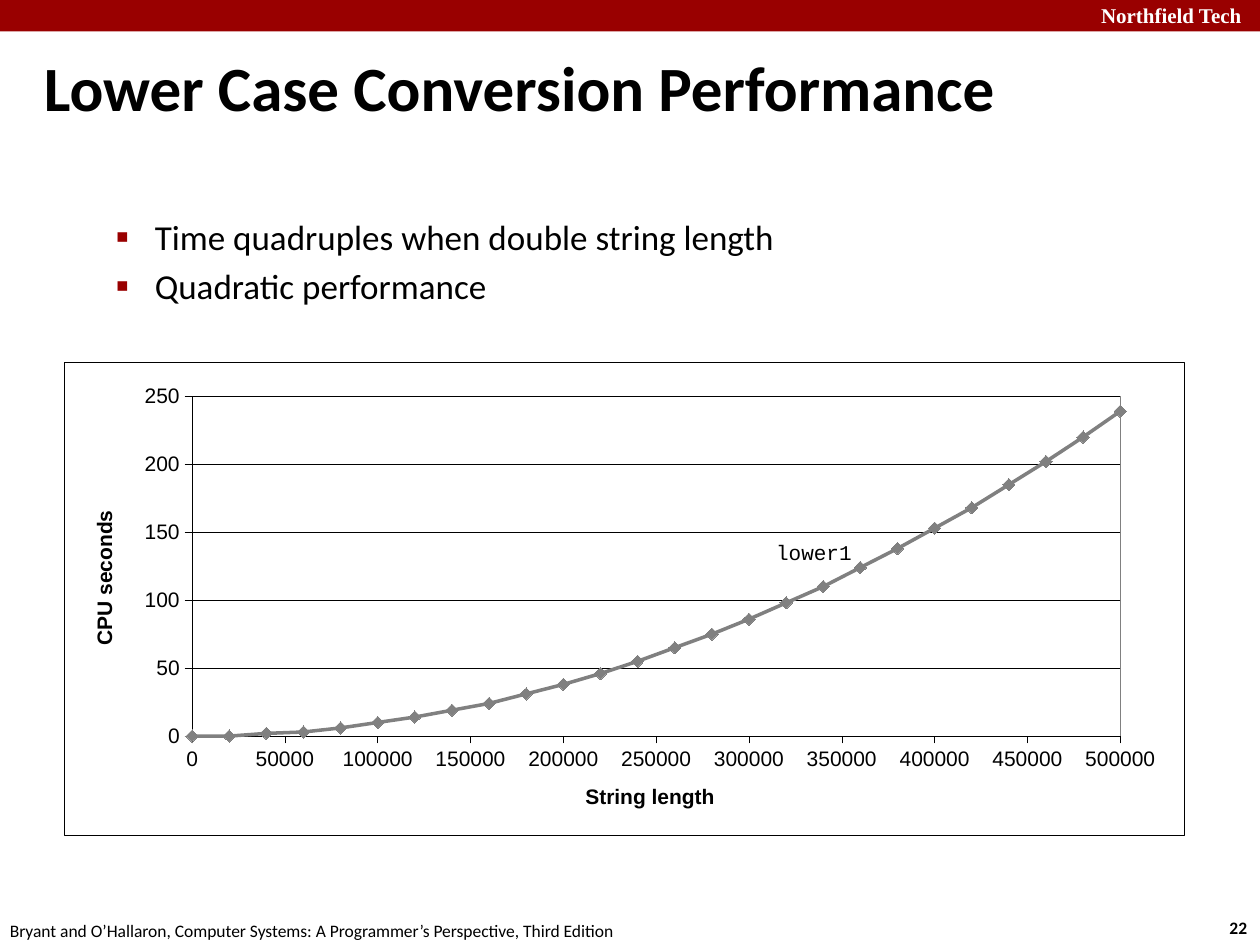
from lxml import etree
from pptx import Presentation
from pptx import util as u
from pptx.chart.data import XyChartData
from pptx.dml.color import RGBColor
from pptx.enum import chart as ch, shapes, text
from pptx.oxml import parse_xml
from pptx.oxml.ns import nsdecls, qn

BLACK, WHITE, RED, GRAY = "000000", "FFFFFF", "990000", "808080"
LENGTHS = range(0, 500001, 20000)
SECONDS = [0, 0, 2, 3, 6, 10, 14, 19, 24, 31, 38, 46, 55, 65, 75, 86, 98,
           110, 124, 138, 153, 168, 185, 202, 220, 239]


def rgb(value):
    return RGBColor.from_string(value)


def set_font(font, size, name="Calibri", color=BLACK, bold=False):
    values = {"size": u.Pt(size), "name": name, "bold": bold}
    for key, value in values.items():
        setattr(font, key, value)
    font.color.rgb = rgb(color)


def set_line(line, color=BLACK, width=0.25):
    line.color.rgb = rgb(color)
    line.width = u.Pt(width)


def add_text(slide, box, lines, size, wrap=True, frame_format=None, **font):
    frame = slide.shapes.add_textbox(*map(u.Inches, box)).text_frame
    frame.word_wrap = wrap
    for key, value in (frame_format or {}).items():
        setattr(frame, key, value)
    for index, line in enumerate(lines):
        paragraph = frame.paragraphs[0] if index == 0 else frame.add_paragraph()
        run = paragraph.add_run()
        run.text = line
        set_font(run.font, size, **font)
    return frame


def add_header(slide, box):
    left, top, width, height = box
    band = slide.shapes.add_shape(shapes.MSO_SHAPE.RECTANGLE, *map(u.Inches, box))
    band.shadow.inherit = False
    band.fill.solid()
    band.fill.fore_color.rgb = rgb(RED)
    band.line.fill.background()
    add_text(slide, (left + width - 1.36, top - 0.03, 1.43, 0.3), ["Northfield Tech"],
             12, name="Times New Roman", color=WHITE, bold=True)


def add_footer(slide, box):
    left, top, width, height = box
    add_text(slide, (left - 0.02, top + 0.02, 5.08, height),
             ["Bryant and O’Hallaron, Computer Systems: A Programmer’s Perspective, Third Edition"],
             10, wrap=False)
    add_text(slide, (left + width - 0.34, top, 0.37, height), ["22"],
             10, wrap=False, bold=True)


def add_bullets(slide, box, lines):
    frame = add_text(slide, box, lines, 20)
    for paragraph in frame.paragraphs:
        paragraph.space_before = u.Pt(4)
        properties = paragraph._p.get_or_add_pPr()
        properties.set("marL", str(u.Inches(0.81)))
        properties.set("indent", str(u.Inches(-0.31)))
        color = etree.SubElement(properties, qn("a:buClr"))
        etree.SubElement(color, qn("a:srgbClr"), val=RED)
        etree.SubElement(properties, qn("a:buSzPct"), val="110000")
        etree.SubElement(properties, qn("a:buFont"), typeface="Arial")
        etree.SubElement(properties, qn("a:buChar"), char="▪")


def format_axis(axis, title, maximum, step):
    values = {"minimum_scale": 0, "maximum_scale": maximum, "major_unit": step,
              "major_tick_mark": ch.XL_TICK_MARK.OUTSIDE,
              "minor_tick_mark": ch.XL_TICK_MARK.NONE, "has_major_gridlines": False}
    for key, value in values.items():
        setattr(axis, key, value)
    set_line(axis.format.line)
    set_font(axis.tick_labels.font, 12, "Arial")
    axis.tick_labels.number_format = "General"
    axis.tick_labels.number_format_is_linked = False
    frame = axis.axis_title.text_frame
    frame.text = title
    set_font(frame.paragraphs[0].runs[0].font, 12, "Arial", bold=True)


def area_format(color, fill):
    """Return chart-area properties with a thin border and the given fill."""
    return parse_xml(
        f'<c:spPr {nsdecls("c", "a")}>{fill}<a:ln w="{u.Pt(0.25)}"><a:solidFill>'
        f'<a:srgbClr val="{color}"/></a:solidFill></a:ln></c:spPr>')


def place_plot(chart, x, y, width, height):
    """Fix the inner plot area, in fractions of the chart."""
    plot_area = chart._chartSpace.chart.plotArea
    for old in plot_area.findall(qn("c:layout")):
        plot_area.remove(old)
    layout = etree.Element(qn("c:layout"))
    manual = etree.SubElement(layout, qn("c:manualLayout"))
    parts = {"layoutTarget": "inner", "xMode": "edge", "yMode": "edge",
             "x": x, "y": y, "w": width, "h": height}
    for key, value in parts.items():
        etree.SubElement(manual, qn(f"c:{key}"), val=str(value))
    plot_area.insert(0, layout)
    plot_area.append(area_format(GRAY, "<a:noFill/>"))


def add_performance_chart(slide, box):
    data = XyChartData()
    points = data.add_series("Series 1")
    for length, seconds in zip(LENGTHS, SECONDS):
        points.add_data_point(length, seconds)
    chart = slide.shapes.add_chart(
        ch.XL_CHART_TYPE.XY_SCATTER_SMOOTH, *map(u.Inches, box), data).chart
    chart.has_title = chart.has_legend = False
    set_font(chart.font, 12, "Arial")
    chart.plots[0].vary_by_categories = False

    format_axis(chart.category_axis, "String length", 500000, 50000)
    format_axis(chart.value_axis, "CPU seconds", 250, 50)
    set_line(chart.value_axis.major_gridlines.format.line)

    series = chart.plots[0].series[0]
    series.smooth = True
    set_line(series.format.line, GRAY, 2)
    marker = series.marker
    marker.style, marker.size = ch.XL_MARKER_STYLE.DIAMOND, 7
    marker.format.fill.solid()
    marker.format.fill.fore_color.rgb = rgb(GRAY)
    set_line(marker.format.line, GRAY)

    place_plot(chart, 0.114, 0.073, 0.829, 0.718)
    white = f'<a:solidFill><a:srgbClr val="{WHITE}"/></a:solidFill>'
    chart._chartSpace.chart.addnext(area_format(BLACK, white))

    left, top = box[:2]
    insets = {"margin_left": u.Inches(0.03), "margin_top": u.Inches(0.03),
              "margin_right": 0, "margin_bottom": 0}
    add_text(slide, (left + 5.62, top + 1.38, 0.64, 0.24), ["lower1"], 12,
             wrap=False, frame_format=insets, name="Courier New")


def main():
    presentation = Presentation()
    presentation.slide_width, presentation.slide_height = u.Inches(10), u.Inches(7.5)
    slide = presentation.slides.add_slide(presentation.slide_layouts[6])
    add_header(slide, (0, 0, 10, 0.25))
    add_footer(slide, (0, 7.23, 10, 0.27))
    add_text(slide, (0.25, 0.37, 9.49, 0.63), ["Lower Case Conversion Performance"], 36,
             frame_format={"vertical_anchor": text.MSO_ANCHOR.MIDDLE}, bold=True)
    add_bullets(slide, (0.32, 1.66, 9.09, 0.99),
                ["Time quadruples when double string length", "Quadratic performance"])
    add_performance_chart(slide, (0.51, 2.87, 8.89, 3.76))
    presentation.save("out.pptx")


if __name__ == "__main__":
    main()
